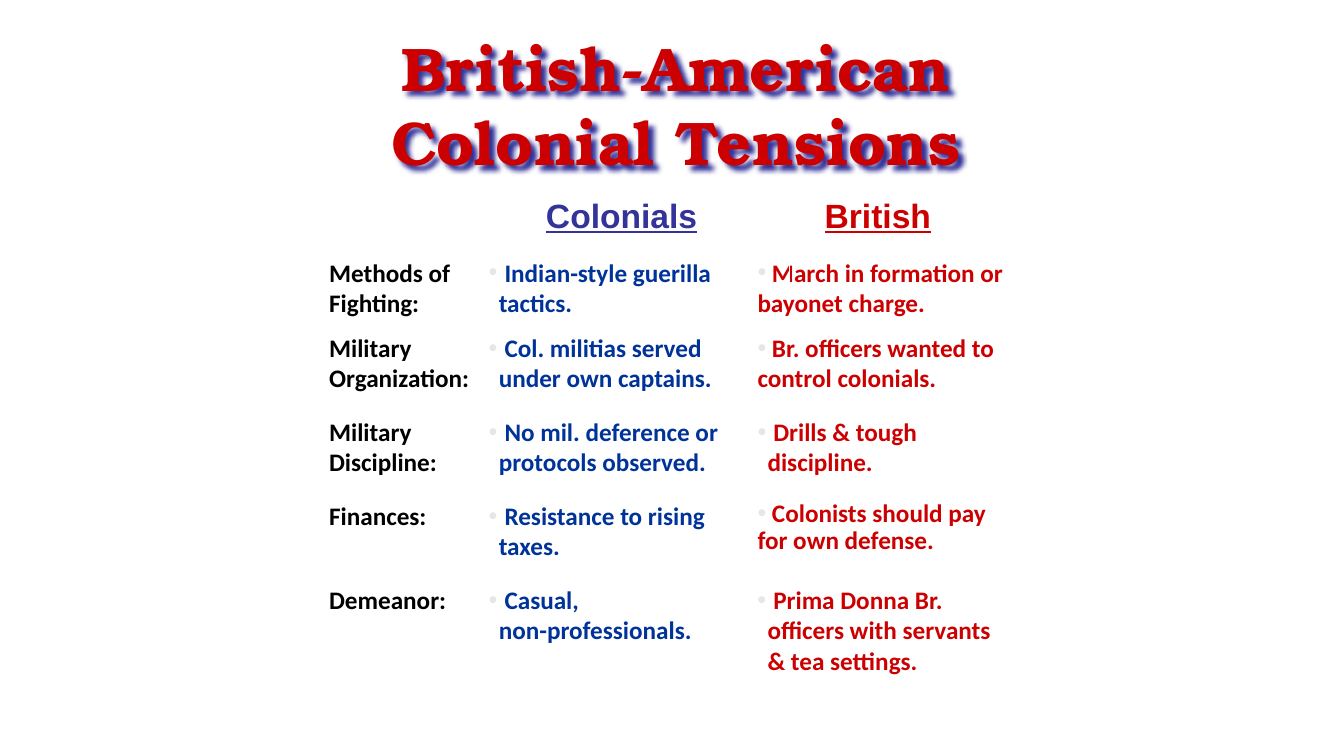
"""Build a slide that contrasts colonial and British military habits."""
from lxml.etree import SubElement
from pptx import Presentation
from pptx.dml.color import RGBColor as RGB
from pptx.enum.text import MSO_AUTO_SIZE as AUTO, PP_ALIGN as ALIGN
from pptx.oxml.ns import qn
from pptx.util import Emu, Pt

PX = 7620
RED = RGB(0xCC, 0x00, 0x00)
BLUE = RGB(0x00, 0x33, 0x99)
INDIGO = RGB(0x33, 0x33, 0x99)
BLACK = RGB(0x00, 0x00, 0x00)
PALE = RGB(0xE7, 0xE6, 0xE6)
LINE_H, PAD_H = 36, 12
LABEL_X, COLONIAL_X, BRITISH_X = 380, 570, 890
HANG = 12

ROWS = [
    (300, "Methods of\nFighting:", "Indian-style guerilla\ntactics.",
     "March in formation or bayonet charge.", 330),
    (390, "Military\nOrganization:", "Col. militias served\nunder own captains.",
     "Br. officers wanted to control colonials.", 340),
    (490, "Military\nDiscipline:", "No mil. deference or\nprotocols observed.",
     "Drills & tough\ndiscipline.", 390),
    (590, "Finances:", "Resistance to rising\ntaxes.",
     "Colonists should pay for own defense.", 330),
    (690, "Demeanor:", "Casual,\nnon-professionals.",
     "Prima Donna Br.\nofficers with servants\n& tea settings.", 350),
]


def px(*lengths):
    """Turn px lengths into EMU."""
    return [Emu(n * PX) for n in lengths]


def add_run(p, text, font, size, color, underline=None):
    """Add one bold run."""
    r = p.add_run()
    r.text = text
    r.font.name, r.font.size = font, Pt(size)
    r.font.bold, r.font.underline = True, underline
    r.font.color.rgb = color


def add_lines(p, text, font, size, color):
    """Add runs parted by line breaks."""
    for i, line in enumerate(text.split("\n")):
        if i:
            p.add_line_break()
        add_run(p, line, font, size, color)


def add_box(s, x, y, w, h):
    """Add a wrapping text box and return it with its paragraph."""
    sp = s.shapes.add_textbox(*px(x, y, w, h))
    tf = sp.text_frame
    tf.word_wrap = True
    tf.auto_size = AUTO.SHAPE_TO_FIT_TEXT
    return sp, tf.paragraphs[0]


def set_bullet(p, hang):
    """Give a paragraph a round bullet with a hanging indent."""
    pPr = p._p.get_or_add_pPr()
    pPr.set("marL", str(hang * PX))
    pPr.set("indent", str(-hang * PX))
    SubElement(pPr, qn("a:buFont")).set("typeface", "Arial")
    SubElement(pPr, qn("a:buChar")).set("char", "•")


def add_title(s, text):
    """Add the centred title with a soft shadow."""
    sp, p = add_box(s, 390, 30, 830, 190)
    p.alignment = ALIGN.CENTER
    add_run(p, text, "TeX Gyre Bonum", 44, RED)
    effects = SubElement(sp._element.spPr, qn("a:effectLst"))
    shadow = SubElement(effects, qn("a:outerShdw"), blurRad=str(6 * PX),
                        dist=str(6 * PX), dir="2700000", algn="ctr")
    SubElement(shadow, qn("a:srgbClr")).set("val", str(INDIGO))


def add_heading(s, text, x, w, color):
    """Add a one-cell table that heads a column."""
    table = s.shapes.add_table(1, 1, *px(x, 230, w, 118)).table
    table.first_row = table.horz_banding = False
    cell = table.cell(0, 0)
    cell.fill.background()
    p = cell.text_frame.paragraphs[0]
    p.alignment = ALIGN.CENTER
    add_run(p, text, "Arial", 24, color, True)


def add_label(s, text, y):
    """Add a row label."""
    w = 220 if "Organization" in text else 200
    h = PAD_H + LINE_H * len(text.split("\n"))
    add_lines(add_box(s, LABEL_X, y, w, h)[1], text, "Calibri", 18, BLACK)


def add_point(s, text, x, y, w, color, spacing=None):
    """Add a bulleted point."""
    breaks = text.count("\n")
    h = PAD_H + LINE_H * max(2, breaks + 1)
    p = add_box(s, x, y, w, h)[1]
    if spacing:
        p.line_spacing = spacing
    set_bullet(p, HANG if breaks else 0)
    add_run(p, " ", "Calibri", 18, PALE)
    add_lines(p, text, "Calibri", 18, color)


def main():
    """Build and save the slide."""
    prs = Presentation()
    prs.slide_width, prs.slide_height = px(1600, 900)
    s = prs.slides.add_slide(prs.slide_layouts[6])
    add_heading(s, "British", 940, 210, RED)
    for y, label, colonial, british, w in ROWS:
        add_label(s, label, y)
        add_point(s, colonial, COLONIAL_X, y, 380, BLUE)
        add_point(s, british, BRITISH_X, y, w, RED, 0.9 if label == "Finances:" else None)
    add_title(s, "British-American Colonial Tensions")
    add_heading(s, "Colonials", 540, 400, INDIGO)
    prs.save("out.pptx")


if __name__ == "__main__":
    main()
